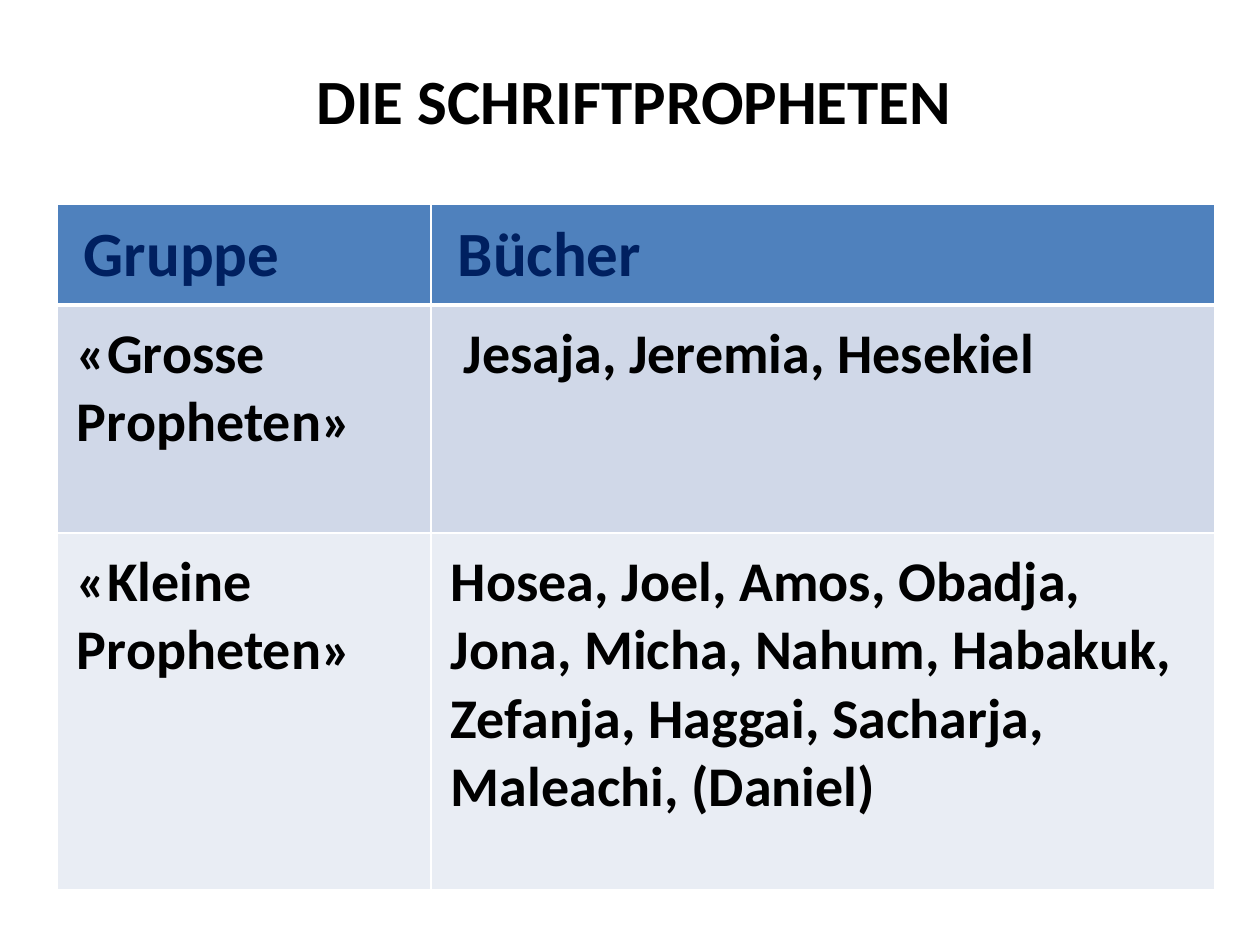
from lxml import etree
from pptx import Presentation
from pptx import util as u
from pptx.dml.color import RGBColor
from pptx.enum import shapes, text
from pptx.oxml.ns import qn

SCALE = 914400 / 126
FONT = "Calibri"
WHITE, BLACK, NAVY = "FFFFFF", "000000", "002060"
COLUMN_WIDTHS = (374, 784)
ROW_HEIGHTS = (101, 228, 357)
ROW_FILLS = ("4F81BD", "D0D8E8", "E9EDF4")
ROWS = (
    (" Gruppe", " Bücher"),
    ("«Grosse Propheten»", " Jesaja, Jeremia, Hesekiel"),
    ("«Kleine\nPropheten»",
     "Hosea, Joel, Amos, Obadja, Jona, Micha, Nahum, Habakuk, "
     "Zefanja, Haggai, Sacharja, Maleachi, (Daniel)"),
)


def px(length):
    return u.Emu(round(length * SCALE))


def rgb(value):
    return RGBColor.from_string(value)


def write(frame, content, size, color, align=None):
    frame.text = content
    for paragraph in frame.paragraphs:
        paragraph.alignment = align
        font = paragraph.font
        font.name, font.size, font.bold = FONT, u.Pt(size), True
        font.color.rgb = rgb(color)


def set_border(cell, side, points):
    line = etree.SubElement(cell._tc.get_or_add_tcPr(), qn("a:ln" + side),
                            w=str(u.Pt(points)))
    fill = etree.SubElement(line, qn("a:solidFill"))
    etree.SubElement(fill, qn("a:srgbClr"), val=WHITE)


def add_title(slide):
    title = slide.shapes.add_shape(shapes.MSO_SHAPE.RECTANGLE,
                                   px(54), px(55), px(1160), px(80))
    title.shadow.inherit = False
    title.fill.solid()
    title.fill.fore_color.rgb = rgb(WHITE)
    color = title.fill._xPr.find(qn("a:solidFill"))[0]
    etree.SubElement(color, qn("a:alpha"), val="60000")
    title.line.fill.background()
    title.text_frame.vertical_anchor = text.MSO_ANCHOR.TOP
    write(title.text_frame, "DIE SCHRIFTPROPHETEN", 36, BLACK,
          text.PP_ALIGN.CENTER)


def fill_cell(cell, content, row):
    header = row == 0
    if header:
        cell.vertical_anchor = text.MSO_ANCHOR.MIDDLE
    else:
        cell.margin_left = cell.margin_right = px(20)
        cell.margin_top = cell.margin_bottom = px(15)
    for side in "LRTB":
        thick = (header and side == "B") or (row == 1 and side == "T")
        set_border(cell, side, 3 if thick else 1)
    cell.fill.solid()
    cell.fill.fore_color.rgb = rgb(ROW_FILLS[row])
    write(cell.text_frame, content, 36 if header else 32,
          NAVY if header else BLACK)


def add_prophets_table(slide):
    table = slide.shapes.add_table(
        len(ROWS), len(COLUMN_WIDTHS), px(57), px(204),
        px(sum(COLUMN_WIDTHS)), px(sum(ROW_HEIGHTS))).table
    for column, width in zip(table.columns, COLUMN_WIDTHS):
        column.width = px(width)
    for row, (contents, height) in enumerate(zip(ROWS, ROW_HEIGHTS)):
        table.rows[row].height = px(height)
        for column, content in enumerate(contents):
            fill_cell(table.cell(row, column), content, row)


def main():
    deck = Presentation()
    deck.slide_width, deck.slide_height = px(1260), px(945)
    slide = deck.slides.add_slide(deck.slide_layouts[6])
    add_title(slide)
    add_prophets_table(slide)
    deck.save("out.pptx")


if __name__ == "__main__":
    main()
